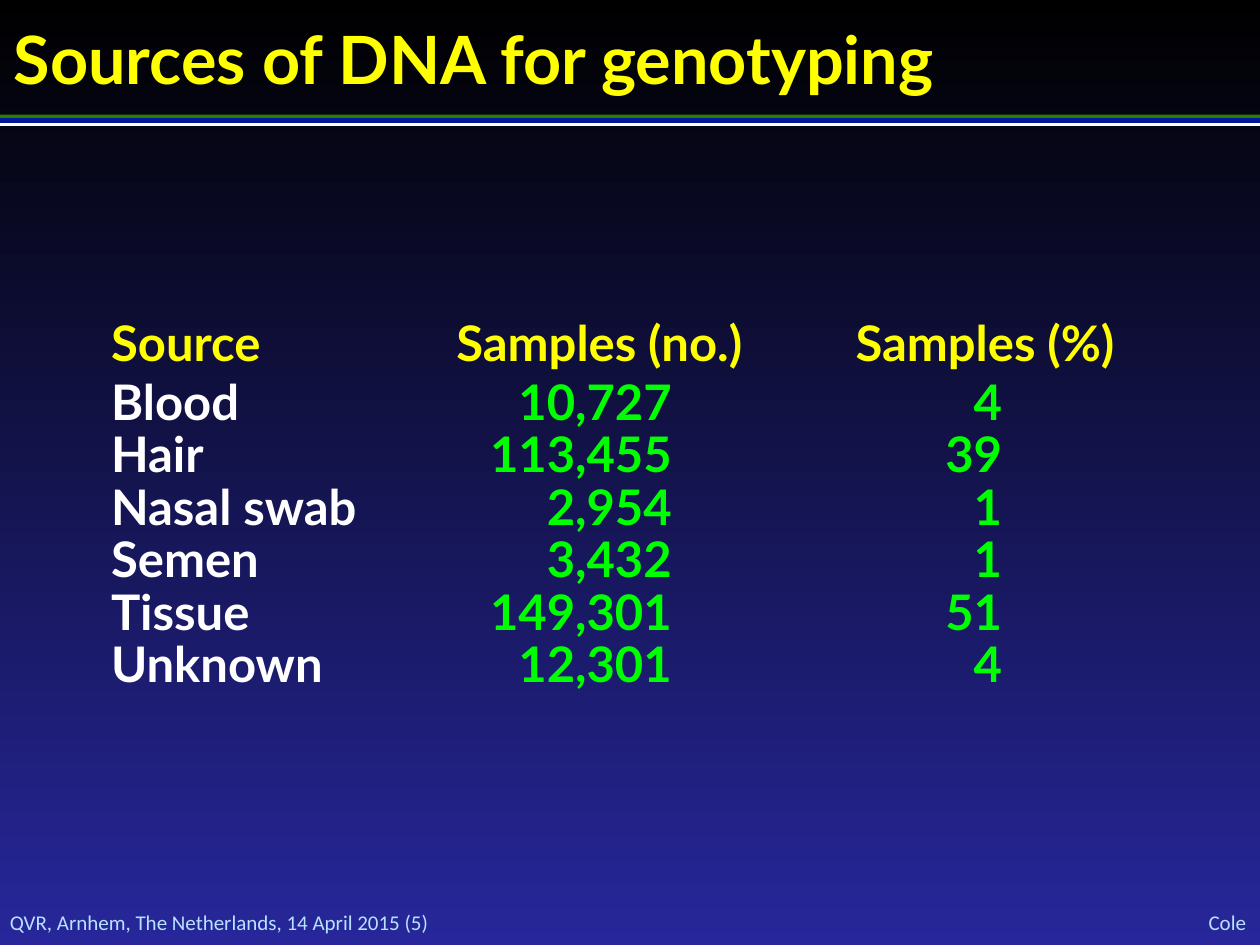
from dataclasses import dataclass

from pptx import Presentation
from pptx.dml.color import RGBColor as Rgb
from pptx.enum.shapes import MSO_SHAPE as Preset
from pptx.enum.text import MSO_ANCHOR as Anchor, PP_ALIGN as Align
from pptx.oxml.ns import qn
from pptx.util import Cm, Pt

COLOURS = {
    "sky top": "000000",
    "sky bottom": "27279B",
    "yellow": "FFFF00",
    "white": "FFFFFF",
    "number": "00FF00",
    "footer": "B8E2FF",
    "green stripe": "2A7E00",
    "blue stripe": "001799",
}
NO_TABLE_STYLE = "{2D5ABB26-0587-4C30-8999-92F81FD0307C}"
LINE_PITCH = Pt(30)
ROW_HEIGHT = Cm(1.06)
FIRST_SAMPLE_GAP = Cm(0.13)
SIDE_INSET = Cm(0.18)


@dataclass
class Stripe:
    top: float
    height: float
    colour: str


@dataclass
class Label:
    text: str
    left: float
    top: float
    width: float
    height: float
    size: int
    font: str
    colour: str
    bold: bool = False
    align: Align = Align.LEFT
    anchor: Anchor = Anchor.MIDDLE


@dataclass
class Column:
    heading: str
    width: float
    heading_align: Align
    align: Align
    colour: str
    right_inset: float
    values: list[str]


STRIPES = [
    Stripe(2.31, 0.08, "green stripe"),
    Stripe(2.46, 0.08, "white"),
    Stripe(2.38, 0.1, "blue stripe"),
]
LABELS = [
    Label("QVR, Arnhem, The Netherlands, 14 April 2015 (5)",
          0.2, 18.34, 21.59, 0.51, 12, "Calibri", "footer"),
    Label("Cole", 22.28, 18.32, 2.84, 0.53, 12, "Calibri", "footer", align=Align.RIGHT),
    Label("Sources of DNA for genotyping", 0.28, 0.36, 22.86, 1.63, 38, "Lato",
          "yellow", bold=True, anchor=Anchor.TOP),
]
COLUMNS = [
    Column("Source", 5.89, Align.LEFT, Align.LEFT, "white", 0.18,
           ["Blood", "Hair", "Nasal swab", "Semen", "Tissue", "Unknown"]),
    Column("Samples (no.)", 8.26, Align.CENTER, Align.RIGHT, "number", 2.67,
           ["10,727", "113,455", "2,954", "3,432", "149,301", "12,301"]),
    Column("Samples (%)", 7.29, Align.CENTER, Align.RIGHT, "number", 3.3,
           ["4", "39", "1", "1", "51", "4"]),
]


def set_all(target, values: dict) -> None:
    for name, value in values.items():
        setattr(target, name, value)


def rgb(name: str) -> Rgb:
    return Rgb.from_string(COLOURS[name])


def write(para, text: str, size: int, font: str, colour: str, bold: bool, align: Align) -> None:
    para.alignment = align
    span = para.add_run()
    span.text = text
    set_all(span.font, {"size": Pt(size), "name": font, "bold": bold})
    span.font.color.rgb = rgb(colour)


def paint_background(slide) -> None:
    fill = slide.background.fill
    fill.gradient()
    fill.gradient_angle = 270
    for stop, position, name in zip(fill.gradient_stops, (0, 1), ("sky top", "sky bottom")):
        stop.position = position
        stop.color.rgb = rgb(name)


def draw_stripe(slide, stripe: Stripe, width: int) -> None:
    bar = slide.shapes.add_shape(Preset.RECTANGLE, 0, Cm(stripe.top), width, Cm(stripe.height))
    bar.shadow.inherit = False
    bar.fill.solid()
    bar.fill.fore_color.rgb = rgb(stripe.colour)
    bar.line.fill.background()


def draw_label(slide, label: Label) -> None:
    box = slide.shapes.add_textbox(
        Cm(label.left), Cm(label.top), Cm(label.width), Cm(label.height))
    set_all(box.text_frame, {
        "word_wrap": True, "vertical_anchor": label.anchor,
        "margin_left": 0, "margin_top": 0, "margin_right": 0, "margin_bottom": 0,
    })
    write(box.text_frame.paragraphs[0], label.text, label.size, label.font,
          label.colour, label.bold, label.align)


def fill_cell(cell, text: str, colour: str, align: Align, right_inset: int, top_inset: int) -> None:
    cell.fill.background()
    set_all(cell, {
        "vertical_anchor": Anchor.BOTTOM, "margin_left": SIDE_INSET,
        "margin_top": top_inset, "margin_right": right_inset, "margin_bottom": 0,
    })
    para = cell.text_frame.paragraphs[0]
    para.line_spacing = LINE_PITCH
    write(para, text, 28, "Lato", colour, True, align)


def draw_samples_table(slide, columns: list[Column]) -> None:
    row_count = len(columns[0].values) + 1
    frame = slide.shapes.add_table(
        row_count, len(columns), Cm(2.06), Cm(6.43),
        Cm(sum(column.width for column in columns)),
        ROW_HEIGHT * row_count + FIRST_SAMPLE_GAP)
    table = frame.table
    set_all(table, {"first_row": False, "horz_banding": False})
    for style in frame.element.iter(qn("a:tableStyleId")):
        style.text = NO_TABLE_STYLE
    for index, row in enumerate(table.rows):
        row.height = ROW_HEIGHT + (FIRST_SAMPLE_GAP if index == 1 else 0)
    for across, column in enumerate(columns):
        table.columns[across].width = Cm(column.width)
        fill_cell(table.cell(0, across), column.heading, "yellow",
                  column.heading_align, SIDE_INSET, 0)
        for down, value in enumerate(column.values, start=1):
            top_inset = FIRST_SAMPLE_GAP if (down, across) == (1, 0) else 0
            fill_cell(table.cell(down, across), value, column.colour,
                      column.align, Cm(column.right_inset), top_inset)


def main() -> None:
    deck = Presentation()
    set_all(deck, {"slide_width": Cm(25.4), "slide_height": Cm(19.05)})
    slide = deck.slides.add_slide(deck.slide_layouts[6])
    paint_background(slide)
    for stripe in STRIPES:
        draw_stripe(slide, stripe, deck.slide_width)
    for label in LABELS:
        draw_label(slide, label)
    draw_samples_table(slide, COLUMNS)
    deck.save("out.pptx")


if __name__ == "__main__":
    main()
